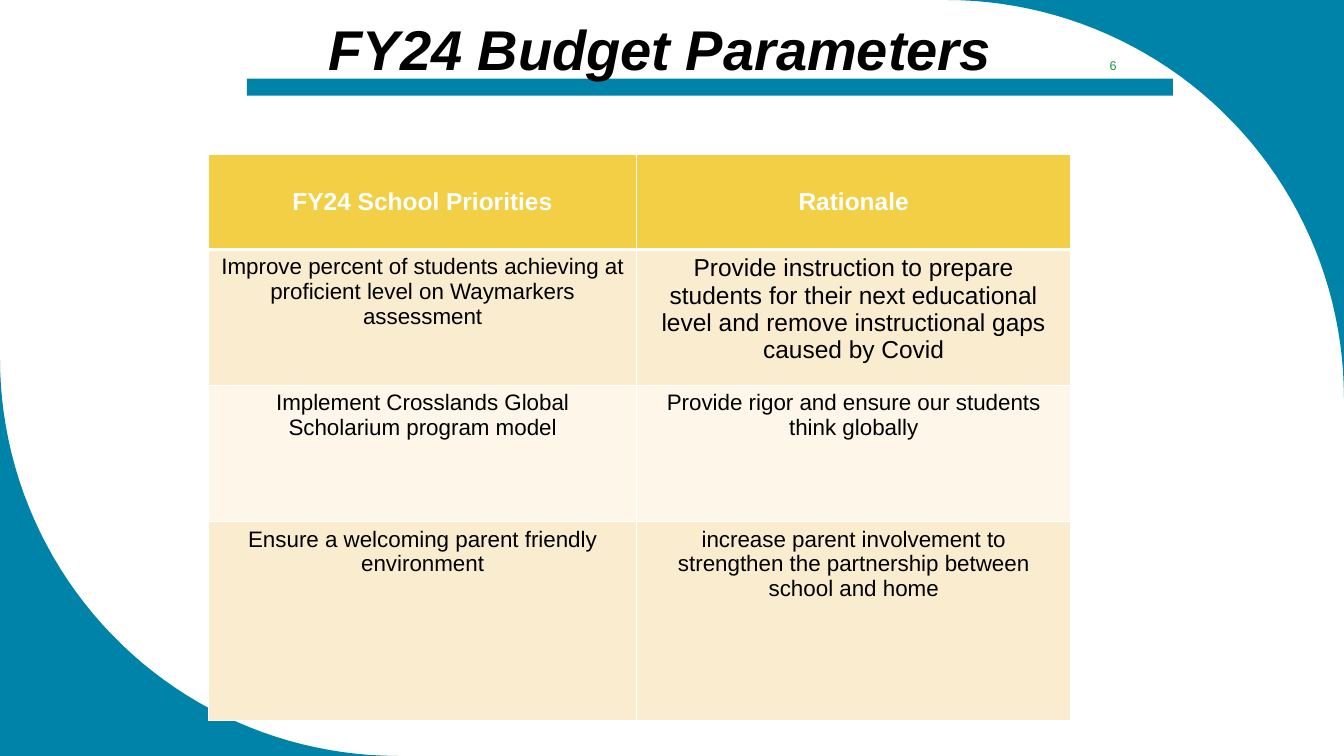
from collections import namedtuple
from math import cos, radians, sin

from lxml.etree import SubElement
from pptx import Presentation
from pptx.dml.color import RGBColor
from pptx.enum.shapes import MSO_SHAPE
from pptx.enum.text import MSO_ANCHOR, PP_ALIGN
from pptx.oxml.ns import qn
from pptx.util import Cm, Pt

TEAL = RGBColor(0x00, 0x83, 0xA9)
GREEN = RGBColor(0x15, 0x98, 0x39)
GOLD = RGBColor(0xF3, 0xCF, 0x45)
CREAM = RGBColor(0xFA, 0xED, 0xCF)
PALE_CREAM = RGBColor(0xFD, 0xF6, 0xE9)
BLACK = RGBColor(0x00, 0x00, 0x00)
WHITE = RGBColor(0xFF, 0xFF, 0xFF)

FONT = "Arial"
PAGE_WIDTH, PAGE_HEIGHT = 33.87, 19.05
CORNER_SIZE = 10.03
ARC_STEP = 2  # degrees

# All box lengths are centimetres
Box = namedtuple("Box", "left top width height")

COLUMN_WIDTHS = (10.78, 10.95)
ROW_HEIGHTS = (2.4, 3.43, 3.43, 5)
# Each cell holds its text and its size in points
PRIORITIES = (
    (("FY24 School Priorities", 17.5), ("Rationale", 17.5)),
    (("Improve percent of students achieving at proficient level on Waymarkers assessment", 16),
     ("Provide instruction to prepare students for their next educational level "
      "and remove instructional gaps caused by Covid", 17.5)),
    (("Implement Crosslands Global Scholarium program model", 16),
     ("Provide rigor and ensure our students think globally", 16)),
    (("Ensure a welcoming parent friendly environment", 16),
     ("increase parent involvement to strengthen the partnership between school and home", 16)),
)


def paint(shape, color):
    shape.shadow.inherit = False
    shape.fill.solid()
    shape.fill.fore_color.rgb = color
    shape.line.fill.background()


def write(frame, text, size, color, bold=False, italic=False):
    frame.word_wrap = True
    frame.text = text
    para = frame.paragraphs[0]
    para.alignment = PP_ALIGN.CENTER
    font = para.runs[0].font
    font.name, font.size = FONT, Pt(size)
    font.bold, font.italic = bold, italic
    font.color.rgb = color


def add_text(page, box, text, size, color, anchor=MSO_ANCHOR.TOP, **style):
    frame = page.shapes.add_textbox(*map(Cm, box)).text_frame
    write(frame, text, size, color, **style)
    frame.vertical_anchor = anchor


def add_corner(page, box, at_right):
    """Fill the box outside a quarter circle, at its top right or bottom left."""
    if at_right:
        center_x, center_y, first_angle = box.left, box.top + box.height, -90
        corner = (box.left + box.width, box.top)
    else:
        center_x, center_y, first_angle = box.left + box.width, box.top, 90
        corner = (box.left, box.top + box.height)
    angles = [radians(first_angle + step) for step in range(0, 91, ARC_STEP)]
    arc = [(center_x + box.width * cos(angle), center_y + box.height * sin(angle))
           for angle in angles]
    builder = page.shapes.build_freeform(*map(Cm, corner))
    builder.add_line_segments([(Cm(x), Cm(y)) for x, y in arc], close=True)
    paint(builder.convert_to_shape(), TEAL)


def add_header(page, box):
    # Bar under the title
    bar = page.shapes.add_shape(
        MSO_SHAPE.RECTANGLE, Cm(box.left), Cm(box.top + 1.75), Cm(box.width), Cm(0.43))
    paint(bar, TEAL)
    # Title and page number
    add_text(page, Box(box.left + 1.53, box.top, 17.75, 1.96),
             "FY24 Budget Parameters", 40, BLACK, bold=True, italic=True)
    add_text(page, Box(box.left + 20.8, box.top + 1.04, 2.06, 0.76),
             "6", 9, GREEN, MSO_ANCHOR.MIDDLE)


def add_border(cell, side, points):
    line = SubElement(cell._tc.get_or_add_tcPr(), qn(f"a:ln{side}"), w=str(Pt(points)))
    fill = SubElement(line, qn("a:solidFill"))
    SubElement(fill, qn("a:srgbClr"), val=str(WHITE))


def add_priorities(page, box):
    table = page.shapes.add_table(
        len(PRIORITIES), len(COLUMN_WIDTHS), *map(Cm, box)).table
    for column, width in zip(table.columns, COLUMN_WIDTHS):
        column.width = Cm(width)
    for index, (row, height, entries) in enumerate(zip(table.rows, ROW_HEIGHTS, PRIORITIES)):
        row.height = Cm(height)
        is_header = index == 0
        color = GOLD if is_header else CREAM if index % 2 else PALE_CREAM
        # The rule below the header is thicker than the others
        borders = {"L": 1, "R": 1, "T": 3 if index == 1 else 1, "B": 3 if is_header else 1}
        for cell, (text, size) in zip(row.cells, entries):
            for side, points in borders.items():
                add_border(cell, side, points)
            cell.fill.solid()
            cell.fill.fore_color.rgb = color
            cell.vertical_anchor = MSO_ANCHOR.MIDDLE if is_header else MSO_ANCHOR.TOP
            write(cell.text_frame, text, size, WHITE if is_header else BLACK, bold=is_header)


def main():
    deck = Presentation()
    deck.slide_width, deck.slide_height = Cm(PAGE_WIDTH), Cm(PAGE_HEIGHT)
    page = deck.slides.add_slide(deck.slide_layouts[6])
    # Rounded corners of the page
    add_corner(page, Box(PAGE_WIDTH - CORNER_SIZE, 0, CORNER_SIZE, CORNER_SIZE), True)
    add_corner(page, Box(0, PAGE_HEIGHT - CORNER_SIZE, CORNER_SIZE, CORNER_SIZE), False)
    add_header(page, Box(6.22, 0.23, 23.34, 2.18))
    add_priorities(page, Box(5.26, 3.89, sum(COLUMN_WIDTHS), sum(ROW_HEIGHTS)))
    deck.save("out.pptx")


if __name__ == "__main__":
    main()
